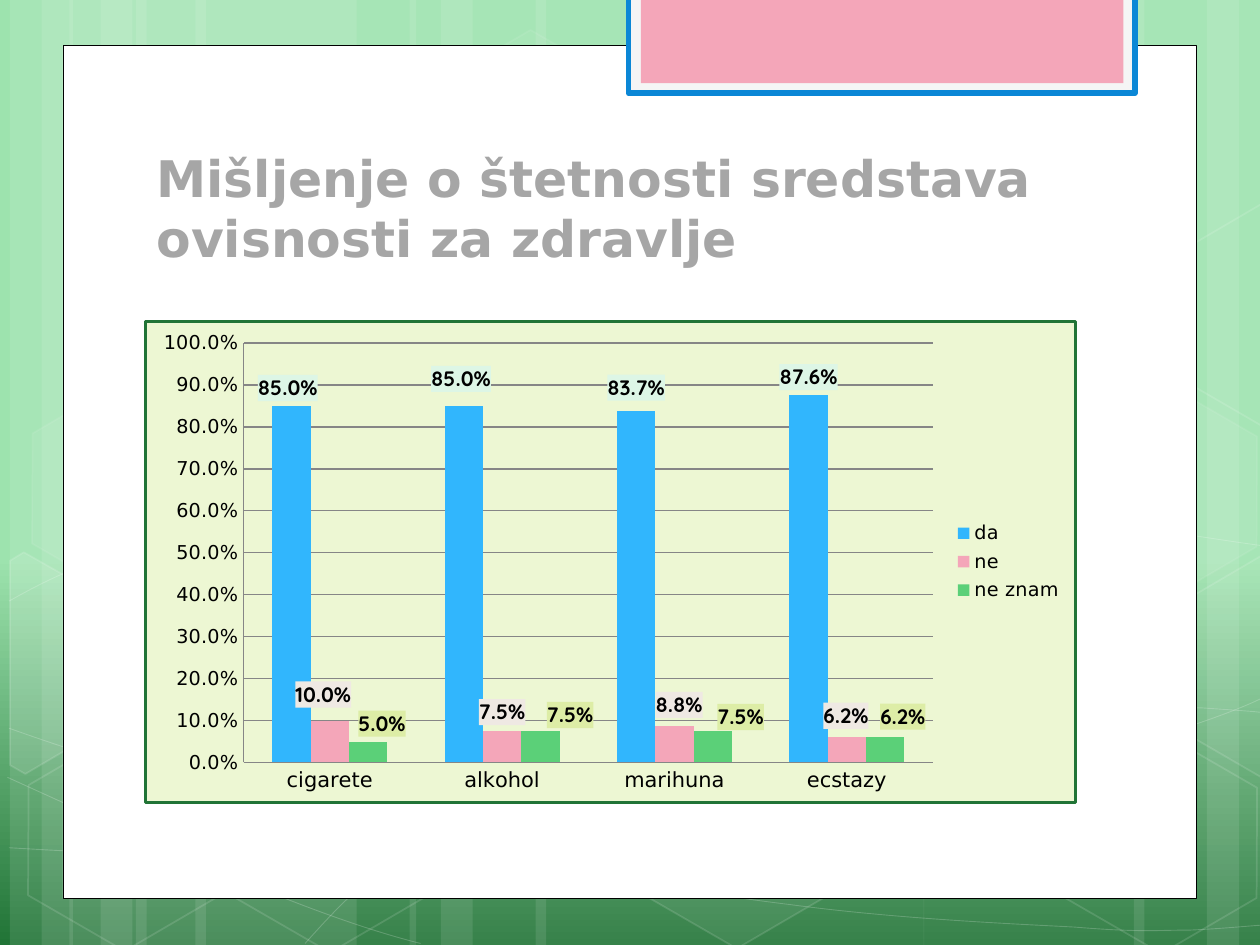
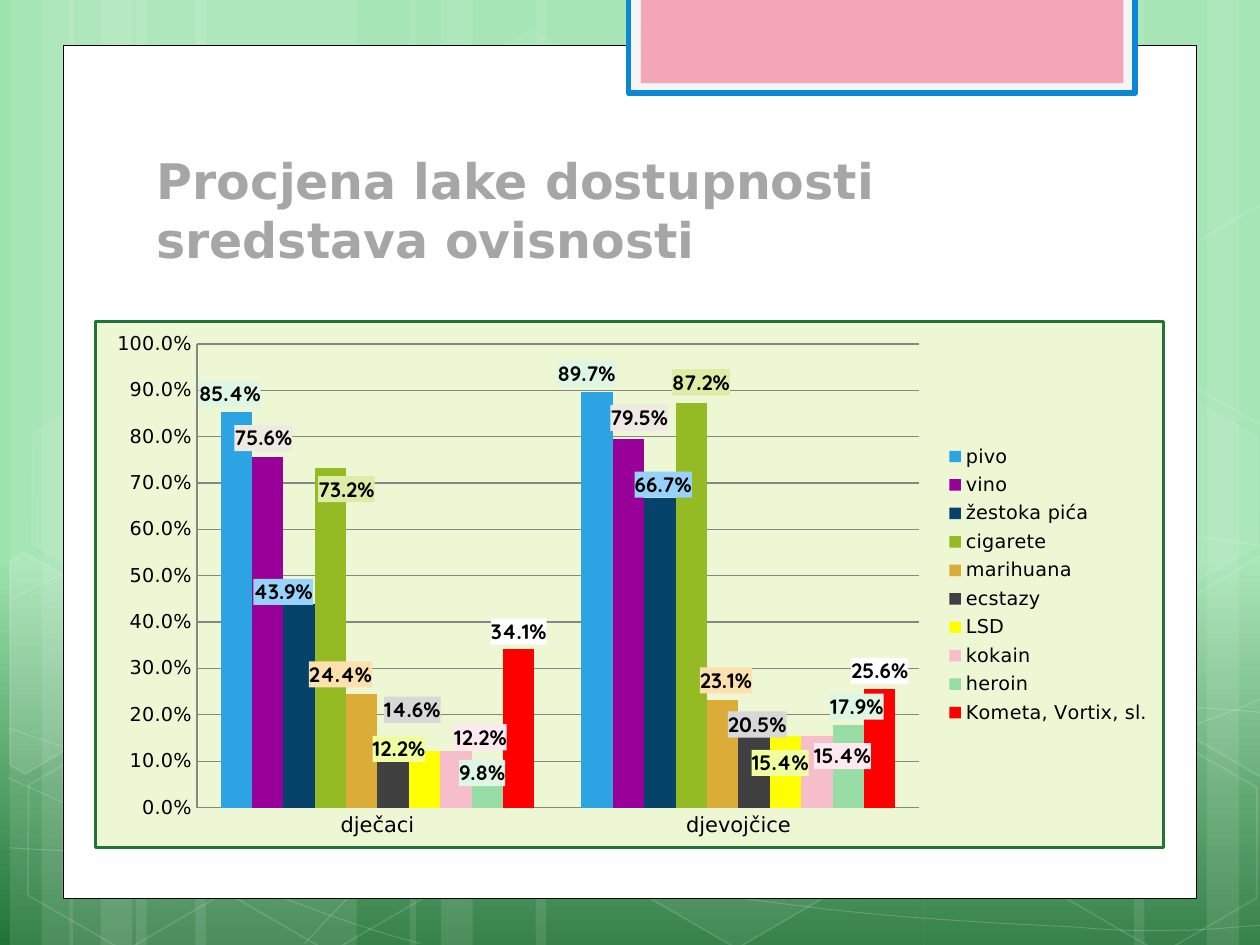
"""Build two survey slides about addictive substances, each a title and a column chart."""
import copy
import math

import pptx
import pptx.chart.data
import pptx.dml.color
import pptx.enum.chart
import pptx.enum.shapes
import pptx.enum.text
import pptx.oxml
import pptx.oxml.ns
import pptx.shapes.shapetree
import pptx.util
from pptx.util import Cm, Pt

COLOURS = {
    "white": "FFFFFF", "black": "000000", "title": "A6A6A6", "grid": "868686",
    "mint": "9DE3AE", "forest": "217436", "tab": "F5F5F5", "tab edge": "0B87D6",
    "pink": "F4A6B9", "chart": "EDF7D3",
    "sky": "31B6FD", "green": "5BD078", "blue": "2CA3E3", "purple": "990099",
    "navy": "06436B", "olive": "94BB24", "ochre": "DCAC39", "charcoal": "404040",
    "yellow": "FFFF00", "rose": "F6BDCB", "sage": "98DCA6", "red": "FF0000",
    "mint tag": "DDF6E6", "beige tag": "EFE9E3", "lime tag": "DDEDA6",
    "blue tag": "97D2FA", "peach tag": "FCE0AE", "grey tag": "D8D8D8",
    "lemon tag": "F0FF9F", "blush tag": "FDE9EF",
}
TEXT_FONT, LABEL_FONT = "DejaVu Sans", "Quicksand"
PERCENT = "0.0%"
SLIDE_SIZE = (25.4, 19.05)
TITLE_BOX = (2.9, 2.86, 19.51, 2.67)

SLIDES = [
    {
        "title": "Mišljenje o štetnosti sredstava ovisnosti za zdravlje",
        "title_size": 28.8,
        "chart_box": (2.9, 6.45, 18.82, 9.75),
        "plot": (10.55, 4.5, 74.1, 87.3),
        "categories": ["cigarete", "alkohol", "marihuna", "ecstazy"],
        "series": [
            ("da", "sky", "mint tag", (0.85, 0.85, 0.837, 0.876),
             [(-0.4, 0), (-0.3, -1.9), (0, -1.2), (0, 0)]),
            ("ne", "pink", "beige tag", (0.1, 0.075, 0.088, 0.062),
             [(-0.7, -1.7), (0, -0.2), (0.5, -0.6), (-0.1, -0.6)]),
            ("ne znam", "green", "lime tag", (0.05, 0.075, 0.075, 0.062),
             [(1.5, 0), (3.2, 0.4), (3, 0.8), (1.9, -0.4)]),
        ],
    },
    {
        "title": "Procjena lake dostupnosti sredstava ovisnosti",
        "title_size": 28,
        "chart_box": (1.9, 6.45, 21.59, 10.67),
        "plot": (9.48, 4.3, 67.6, 88.1),
        "categories": ["dječaci", "djevojčice"],
        "series": [
            ("pivo", "blue", "mint tag", (0.854, 0.897), [(-0.6, 0), (-1, 0)]),
            ("vino", "purple", "beige tag", (0.756, 0.795), [(-0.4, -0.2), (1, -0.6)]),
            ("žestoka pića", "navy", "blue tag", (0.439, 0.667), [(-1.5, 1.1), (0.3, 0.8)]),
            ("cigarete", "olive", "lime tag", (0.732, 0.872), [(1.5, 7.4), (0.9, -0.6)]),
            ("marihuana", "ochre", "peach tag", (0.244, 0.231), [(-2, -0.4), (0.3, -0.4)]),
            ("ecstazy", "charcoal", "grey tag", (0.146, 0.205), [(1.8, -2.3), (0.3, 5.7)]),
            ("LSD", "yellow", "lemon tag", (0.122, 0.154), [(-2.4, 3), (-0.5, 8.5)]),
            ("kokain", "rose", "blush tag", (0.122, 0.154), [(2.3, 0.8), (2.4, 7.2)]),
            ("heroin", "sage", "mint tag", (0.098, 0.179), [(-0.5, 5.5), (0.8, 0)]),
            ("Kometa, Vortix, sl.", "red", "white", (0.341, 0.256), []),
        ],
    },
]

BANDS = [
    (2.74, 4.45), (0.2, 1.27), (0.84, 2.12), (3.94, 4.45), (1.4, 1.27), (2.03, 2.12),
    (18.62, 4.45), (24.33, 1.27), (22.86, 2.12), (10.8, 7.83), (8.26, 1.27), (8.89, 2.12),
]
WAVES = [
    [(0.18, 17.09), (1.55, 17.17), (2.92, 17.25), (4.83, 17.22), (6.73, 17.2),
     (9.09, 17.15), (11.63, 16.89), (14.17, 16.64), (17.78, 16.15), (20.12, 15.67),
     (22.43, 15.19), (24.82, 14.43), (25.58, 14)],
    [(0.18, 12.12), (0.91, 11.71), (1.65, 11.33), (3.07, 10.95), (4.52, 10.57),
     (6.58, 10.01), (8.81, 9.83), (11.07, 9.65), (13.82, 9.63), (16.61, 9.83),
     (19.41, 10.03), (24.05, 10.82), (25.58, 11.02)],
    [(0.15, 15.67), (3.23, 17.07), (6.27, 18.47), (8.48, 19.02)],
    [(0.18, 14.68), (0.97, 14.96), (1.78, 15.24), (3.25, 15.65), (4.72, 16.03),
     (6.93, 16.66), (9.07, 17.09), (11.18, 17.53), (13.84, 17.98), (15.95, 18.24),
     (18.06, 18.52), (20.32, 18.62), (21.67, 18.69), (22.99, 18.8), (23.34, 18.75),
     (24, 18.75), (24.66, 18.72), (25.12, 18.67), (25.58, 18.64)],
    [(6.15, 19.02), (6.6, 18.52), (7.06, 18.01), (7.67, 17.55), (8.28, 17.09),
     (9.14, 16.59), (9.86, 16.23), (10.57, 15.88), (11, 15.72), (11.94, 15.47),
     (12.85, 15.21), (14.55, 14.86), (15.44, 14.68), (16.36, 14.5), (16.48, 14.5),
     (17.27, 14.45), (18.06, 14.38), (19.3, 14.3), (20.17, 14.27), (21.06, 14.25),
     (22.5, 14.27), (22.5, 14.27), (22.5, 14.27), (24.21, 14.27), (24.21, 14.27),
     (24.66, 14.3), (25.1, 14.33), (25.32, 14.35), (25.55, 14.38), (25.48, 14.35),
     (25.55, 14.38)],
]
TILT = 30
HEXAGON_SIZE = (4.45, 3.86)
HEXAGONS = [
    (8.48, 0.91, 4, 8), (12.62, 14.96, 6, 12), (0.28, 15.01, 0, 12), (0.36, 7.92, 7, 8),
    (4.42, 15.04, 0, 12), (19.13, 11.51, 10, 12), (21.18, 15.06, 0, 12), (21.18, 7.98, 7, 8),
]
LEFT_CUT = [(0.2, 11.3), (0.48, 11.13), (2.44, 12.24), (2.41, 14.48), (0.51, 15.6), (0.2, 15.42)]
RIGHT_CUT = [(23.52, 12.32), (25.43, 11.2), (25.63, 11.33), (25.63, 15.57), (25.45, 15.67),
             (23.52, 14.55)]
CUT_HEXAGONS = [
    (LEFT_CUT, (0.91, 13.59), 10),
    (RIGHT_CUT, (25.02, 13.21), 4),
    ([(x, y - 7.09) for x, y in RIGHT_CUT], (25.02, 6.12), 0),
]

qn = pptx.oxml.ns.qn


def rgb(colour):
    return pptx.dml.color.RGBColor.from_string(COLOURS[colour])


def cms(lengths):
    return [Cm(length) for length in lengths]


def xml(markup):
    return pptx.oxml.parse_xml(markup.format(pptx.oxml.ns.nsdecls("a", "c")))


def paint(shape, fill=None, line=None, width=1, fill_alpha=100, line_alpha=100):
    shape.shadow.inherit = False
    for pen, colour in ((shape.fill, fill), (shape.line.fill, line)):
        if colour:
            pen.solid()
            pen.fore_color.rgb = rgb(colour)
        else:
            pen.background()
    if line:
        shape.line.width = Pt(width)
    for route, alpha in (("p:spPr/a:solidFill/a:srgbClr", fill_alpha),
                         ("p:spPr/a:ln/a:solidFill/a:srgbClr", line_alpha)):
        if alpha < 100:
            for tint in shape.element.xpath(route):
                tint.append(xml(f'<a:alpha {{}} val="{alpha * 1000}"/>'))
    return shape


def rectangle(shapes, box, **look):
    kind = pptx.enum.shapes.MSO_SHAPE.RECTANGLE
    return paint(shapes.add_shape(kind, *cms(box)), **look)


def outline(shapes, points, closed, **look):
    corners = [tuple(cms(point)) for point in points]
    builder = shapes.build_freeform(*corners[0], scale=1.0)
    builder.add_line_segments(corners[1:], close=closed)
    return paint(builder.convert_to_shape(), **look)


def wave_line(shapes, controls, **look):
    wave = outline(shapes, controls, False, **look)
    segments = wave.element.xpath(".//a:lnTo")
    for first in range(0, len(segments), 3):
        bend = xml("<a:cubicBezTo {}/>")
        segments[first].addprevious(bend)
        for segment in segments[first:first + 3]:
            bend.append(segment[0])
            segment.getparent().remove(segment)


def turn_back(points, centre):
    cos, sin = math.cos(math.radians(TILT)), math.sin(math.radians(TILT))
    offsets = [(x - centre[0], y - centre[1]) for x, y in points]
    return [(centre[0] + x * cos + y * sin, centre[1] - x * sin + y * cos) for x, y in offsets]


def style_font(font, size, name=TEXT_FONT, colour="black", bold=False):
    font.size, font.name, font.bold = Pt(size), name, bold
    font.color.rgb = rgb(colour)


def write(frame, text, **style):
    frame.word_wrap = True
    frame.auto_size = pptx.enum.text.MSO_AUTO_SIZE.NONE
    frame.vertical_anchor = pptx.enum.text.MSO_ANCHOR.BOTTOM
    paragraph = frame.paragraphs[0]
    paragraph.alignment = pptx.enum.text.PP_ALIGN.LEFT
    run = paragraph.add_run()
    run.text = text
    style_font(run.font, **style)


def build_layout(layout):
    backdrop = layout.background.fill
    backdrop.gradient()
    backdrop.gradient_angle = 270
    for stop, position, colour in zip(backdrop.gradient_stops, (0.59, 1), ("mint", "forest")):
        stop.position = position
        stop.color.rgb = rgb(colour)

    title = layout.placeholders[0]
    title.left, title.top, title.width, title.height = cms(TITLE_BOX)

    shapes = pptx.shapes.shapetree.SlideShapes(layout.shapes.element, layout)
    for left, width in BANDS:
        rectangle(shapes, (left, 0, width, SLIDE_SIZE[1]), fill="white", fill_alpha=10)
    for wave in WAVES:
        wave_line(shapes, wave, line="white", width=0.5, line_alpha=20)
    for left, top, fill_alpha, line_alpha in HEXAGONS:
        kind = pptx.enum.shapes.MSO_SHAPE.HEXAGON
        hexagon = shapes.add_shape(kind, *cms((left, top, *HEXAGON_SIZE)))
        hexagon.adjustments[0] = 0.285
        hexagon.rotation = TILT
        paint(hexagon, fill="white" if fill_alpha else None, fill_alpha=fill_alpha,
              line="white", line_alpha=line_alpha)
    for corners, centre, fill_alpha in CUT_HEXAGONS:
        piece = outline(shapes, turn_back(corners, centre), True, line="white", line_alpha=12,
                        fill="white" if fill_alpha else None, fill_alpha=fill_alpha)
        piece.rotation = TILT
    rectangle(shapes, (1.27, 0.91, 22.86, 17.2), fill="white", line="black", width=0.5)
    rectangle(shapes, (12.67, -0.05, 10.21, 1.93), fill="tab", line="tab edge", width=3.35)
    rectangle(shapes, (12.92, -0.05, 9.73, 1.73), fill="pink")


def manual_layout(values, inner=False):
    target = '<c:layoutTarget val="inner"/>' if inner else ""
    modes = '<c:xMode val="edge"/><c:yMode val="edge"/>' if inner else ""
    sides = "".join(f'<c:{side} val="{value / 100:.4f}"/>' for side, value in zip("xywh", values))
    return xml(f"<c:layout {{}}><c:manualLayout>{target}{modes}{sides}</c:manualLayout></c:layout>")


def solid(colour):
    return f'<a:solidFill><a:srgbClr val="{COLOURS[colour]}"/></a:solidFill>'


def style_axis(axis, size):
    axis.major_tick_mark = axis.minor_tick_mark = pptx.enum.chart.XL_TICK_MARK.NONE
    axis.format.line.color.rgb = rgb("grid")
    style_font(axis.tick_labels.font, size)


def label_series(series, tag, shifts, group):
    labels = series.data_labels
    labels.show_value = True
    labels.number_format, labels.number_format_is_linked = PERCENT, False
    labels.position = pptx.enum.chart.XL_LABEL_POSITION.OUTSIDE_END
    style_font(labels.font, 12, name=LABEL_FONT, bold=True)
    group = group.find(qn("c:dLbls"))
    for leader in group.findall(qn("c:showLeaderLines")):
        group.remove(leader)
    group.find(qn("c:numFmt")).addnext(xml(f"<c:spPr {{}}>{solid(tag)}</c:spPr>"))
    shared = list(group)
    for index, shift in enumerate(shifts):
        if any(shift):
            label = xml(f'<c:dLbl {{}}><c:idx val="{index}"/></c:dLbl>')
            label.append(manual_layout(shift))
            label.extend([copy.deepcopy(part) for part in shared])
            shared[0].addprevious(label)
    group.append(xml('<c:showLeaderLines {} val="0"/>'))


def add_survey(slide, content):
    data = pptx.chart.data.CategoryChartData(number_format=PERCENT)
    data.categories = content["categories"]
    for name, _, _, values, _ in content["series"]:
        data.add_series(name, values)
    kind = pptx.enum.chart.XL_CHART_TYPE.COLUMN_CLUSTERED
    chart = slide.shapes.add_chart(kind, *cms(content["chart_box"]), data).chart
    style_font(chart.font, 10, name=LABEL_FONT)
    chart.has_title = False
    chart.has_legend = True
    chart.legend.position = pptx.enum.chart.XL_LEGEND_POSITION.RIGHT
    chart.legend.include_in_layout = False
    style_font(chart.legend.font, 11)

    style_axis(chart.category_axis, 12)
    scale = chart.value_axis
    style_axis(scale, 11)
    scale.minimum_scale, scale.maximum_scale, scale.major_unit = 0, 1, 0.1
    scale.tick_labels.number_format = PERCENT
    scale.tick_labels.number_format_is_linked = False
    scale.has_major_gridlines = True
    scale.major_gridlines.format.line.color.rgb = rgb("grid")

    columns = chart.plots[0]
    columns.gap_width, columns.overlap, columns.vary_by_categories = 150, 0, False
    groups = list(chart.element.iter(qn("c:ser")))
    for series, group, (_, colour, tag, _, shifts) in zip(columns.series, groups,
                                                          content["series"]):
        series.format.fill.solid()
        series.format.fill.fore_color.rgb = rgb(colour)
        series.invert_if_negative = False
        label_series(series, tag, shifts, group)

    plot_area = chart.element.find(".//" + qn("c:plotArea"))
    for automatic in plot_area.findall(qn("c:layout")):
        plot_area.remove(automatic)
    plot_area.insert(0, manual_layout(content["plot"], inner=True))
    frame = f'<a:ln w="{Pt(1.75)}">{solid("forest")}</a:ln>'
    chart.element.find(qn("c:chart")).addnext(
        xml(f'<c:spPr {{}}>{solid("chart")}{frame}</c:spPr>'))


def main():
    deck = pptx.Presentation()
    deck.slide_width, deck.slide_height = cms(SLIDE_SIZE)
    layout = deck.slide_layouts[5]
    build_layout(layout)
    for content in SLIDES:
        slide = deck.slides.add_slide(layout)
        write(slide.shapes.title.text_frame, content["title"], size=content["title_size"],
              colour="title", bold=True)
        add_survey(slide, content)
    deck.save("out.pptx")


if __name__ == "__main__":
    main()
